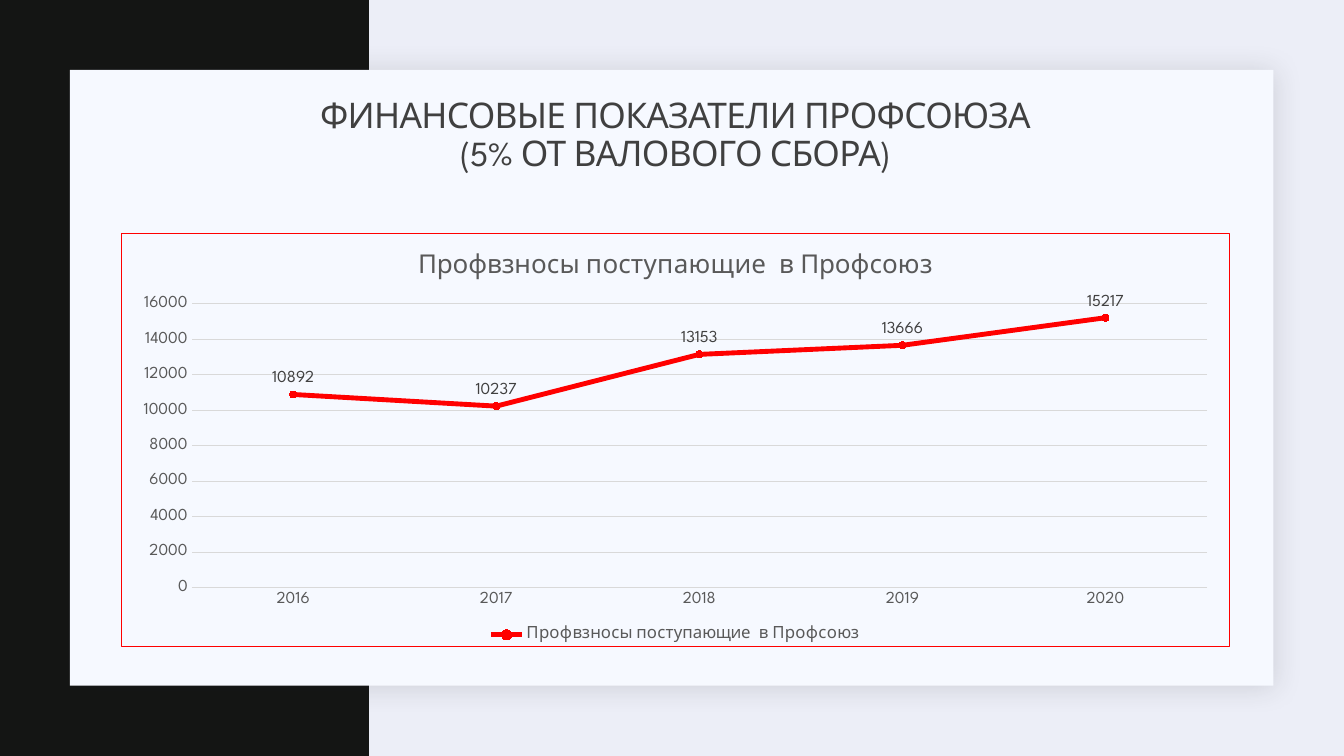
"""Build a slide with a line chart of union membership fees."""
import lxml.etree
import pptx
import pptx.chart.data
import pptx.dml.color
import pptx.enum.chart
import pptx.enum.shapes
import pptx.enum.text
import pptx.oxml
import pptx.oxml.ns
import pptx.util
from pptx.util import Cm

COLORS = {
    "background": "ECEEF7",
    "band": "141514",
    "card": "F6F9FF",
    "shadow": "1F2125",
    "heading": "404040",
    "axis_text": "595959",
    "grid": "D9D9D9",
    "accent": "FF0000",
}
FONT = "League Spartan"
HEADING = ["ФИНАНСОВЫЕ ПОКАЗАТЕЛИ ПРОФСОЮЗА", "(5% ОТ ВАЛОВОГО СБОРА)"]
SERIES_NAME = "Профвзносы поступающие  в Профсоюз"
YEARS = ["2016", "2017", "2018", "2019", "2020"]
FEES = [10892, 10237, 13153, 13666, 15217]
NAMESPACE = pptx.oxml.ns.nsdecls("a")


def rgb(name):
    return pptx.dml.color.RGBColor.from_string(COLORS[name])


def style_font(font, size, color):
    font.name = FONT
    font.size = pptx.util.Pt(size)
    font.bold = False
    font.color.rgb = rgb(color)


def style_line(line, width, color):
    line.color.rgb = rgb(color)
    line.width = pptx.util.Pt(width)


def add_panel(slide, left, top, width, height, color):
    panel = slide.shapes.add_shape(
        pptx.enum.shapes.MSO_SHAPE.RECTANGLE, left, top, width, height)
    panel.shadow.inherit = False
    panel.fill.solid()
    panel.fill.fore_color.rgb = rgb(color)
    panel.line.fill.background()
    return panel


def add_soft_shadow(shape):
    effects = shape._element.spPr.find(pptx.oxml.ns.qn("a:effectLst"))
    effects.append(pptx.oxml.parse_xml(
        f'<a:outerShdw {NAMESPACE} blurRad="254000" dist="25400" dir="2700000" '
        f'algn="tl" rotWithShape="0"><a:srgbClr val="{COLORS["shadow"]}">'
        '<a:alpha val="15000"/></a:srgbClr></a:outerShdw>'))


def add_heading(slide, lines):
    box = slide.shapes.add_textbox(Cm(3.05), Cm(2.62), Cm(27.94), Cm(1.63))
    frame = box.text_frame
    frame.word_wrap = True
    frame.vertical_anchor = pptx.enum.text.MSO_ANCHOR.MIDDLE
    paragraph = frame.paragraphs[0]
    paragraph.alignment = pptx.enum.text.PP_ALIGN.CENTER
    paragraph.line_spacing = 0.9
    for index, line in enumerate(lines):
        if index:
            paragraph.add_line_break()
        run = paragraph.add_run()
        run.text = line
        style_font(run.font, 25.2, "heading")
        run._r.get_or_add_rPr().set("spc", "-50")


def style_chart_title(chart):
    chart.has_title = True
    chart.chart_title.include_in_layout = False
    run = chart.chart_title.text_frame.paragraphs[0].add_run()
    run.text = SERIES_NAME
    style_font(run.font, 18.6, "axis_text")


def style_axes(chart):
    for axis in (chart.category_axis, chart.value_axis):
        axis.major_tick_mark = pptx.enum.chart.XL_TICK_MARK.NONE
        axis.minor_tick_mark = pptx.enum.chart.XL_TICK_MARK.NONE
        style_font(axis.tick_labels.font, 12, "axis_text")
    style_line(chart.category_axis.format.line, 0.75, "grid")
    chart.value_axis.format.line.fill.background()
    chart.value_axis.has_major_gridlines = True
    style_line(chart.value_axis.major_gridlines.format.line, 0.75, "grid")


def style_series(series):
    series.smooth = False
    style_line(series.format.line, 3.5, "accent")
    series.marker.style = pptx.enum.chart.XL_MARKER_STYLE.CIRCLE
    series.marker.size = 5
    series.marker.format.fill.solid()
    series.marker.format.fill.fore_color.rgb = rgb("accent")
    style_line(series.marker.format.line, 0.75, "background")
    labels = series.data_labels
    labels.show_value = True
    labels.position = pptx.enum.chart.XL_LABEL_POSITION.ABOVE
    style_font(labels.font, 12, "heading")


def add_chart_border(chart):
    border = pptx.oxml.parse_xml(
        f'<c:spPr {pptx.oxml.ns.nsdecls("c", "a")}><a:noFill/><a:ln w="9525">'
        f'<a:solidFill><a:srgbClr val="{COLORS["accent"]}"/></a:solidFill>'
        '</a:ln></c:spPr>')
    chart.element.find(pptx.oxml.ns.qn("c:chart")).addnext(border)


def add_fee_chart(slide):
    data = pptx.chart.data.CategoryChartData()
    data.categories = YEARS
    data.add_series(SERIES_NAME, FEES)
    chart = slide.shapes.add_chart(
        pptx.enum.chart.XL_CHART_TYPE.LINE_MARKERS,
        Cm(3.05), Cm(5.87), Cm(27.94), Cm(10.44), data).chart
    chart.font.name = FONT
    chart.font.size = pptx.util.Pt(10)
    style_chart_title(chart)
    style_axes(chart)
    chart.plots[0].vary_by_categories = False
    style_series(chart.plots[0].series[0])
    chart.has_legend = True
    chart.legend.position = pptx.enum.chart.XL_LEGEND_POSITION.BOTTOM
    chart.legend.include_in_layout = False
    style_font(chart.legend.font, 12, "axis_text")
    add_chart_border(chart)


def main():
    presentation = pptx.Presentation()
    presentation.slide_width = Cm(33.87)
    presentation.slide_height = Cm(19.05)
    slide = presentation.slides.add_slide(presentation.slide_layouts[6])
    slide.background.fill.solid()
    slide.background.fill.fore_color.rgb = rgb("background")
    add_panel(slide, 0, 0, Cm(9.3), Cm(19.05), "band")
    card = add_panel(slide, Cm(1.76), Cm(1.76), Cm(30.33), Cm(15.52), "card")
    add_soft_shadow(card)
    add_heading(slide, HEADING)
    add_fee_chart(slide)
    presentation.save("out.pptx")


if __name__ == "__main__":
    main()
